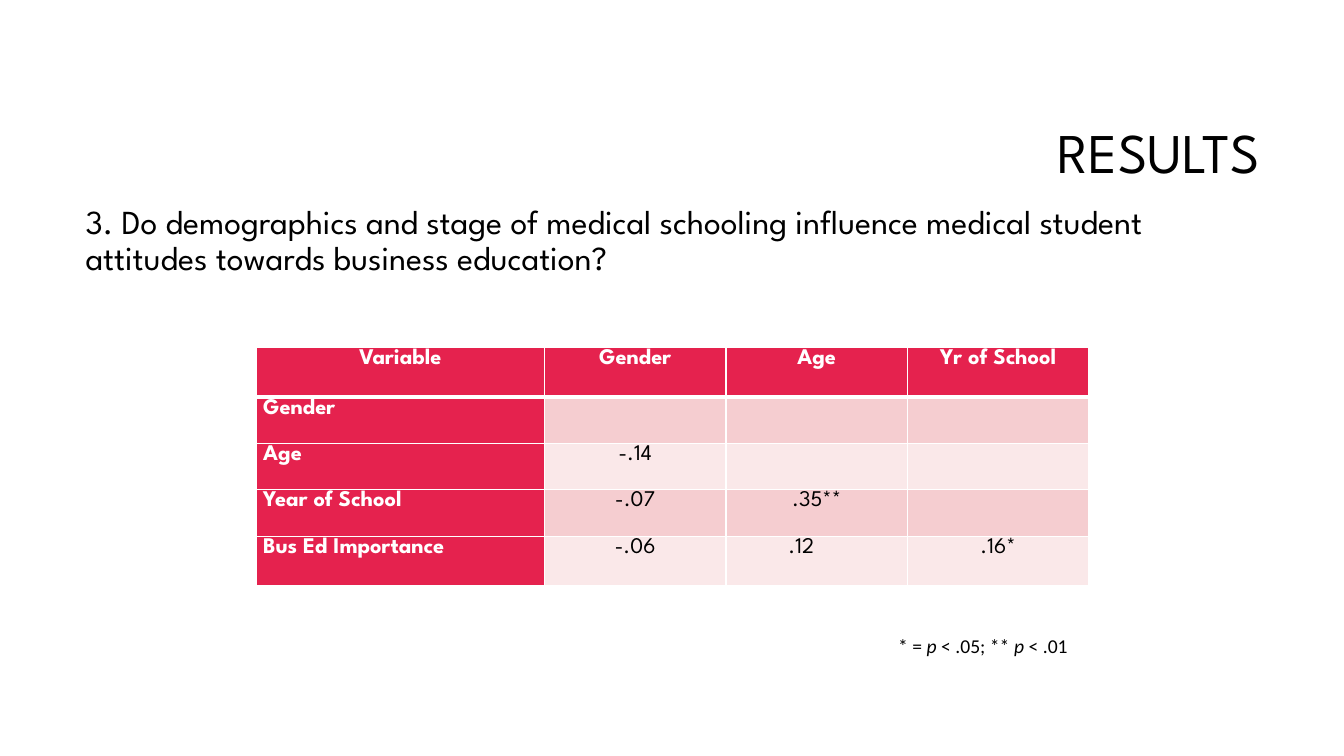
from lxml import etree
from pptx import Presentation, util as u
from pptx.dml.color import RGBColor
from pptx.enum import text as t
from pptx.oxml.ns import qn

PX = 9144
HUES = {"ink": "000000", "white": "FFFFFF", "red": "E5224E", "rose": "F5CDD0", "blush": "FAE8E9"}
SANS = "League Spartan"
MID = t.PP_ALIGN.CENTER
COLS = [286, 180, 180, 180]
ROWS = [49, 46, 46, 46, 49]
CELLS = [
    ["Variable", "Gender", "Age", "Yr of School"],
    ["Gender", "", "", ""],
    ["Age", "-.14", "", ""],
    ["Year of School", "-.07", ".35**", ""],
    ["Bus Ed Importance", "-.06", ".12", ".16*"],
]


def px(n):
    return u.Emu(n * PX)


def hue(name):
    return RGBColor.from_string(HUES[name])


def apply(item, form):
    for key, val in form.items():
        setattr(item, key, val)


def write(para, runs, font, size, ink="ink", **form):
    for words, slant in runs:
        run = para.add_run()
        run.text = words
        apply(run.font, {"name": font, "size": u.Pt(size), "italic": slant, **form})
        run.font.color.rgb = hue(ink)


def text_box(slide, box, runs, font, size, frame, para):
    area = slide.shapes.add_textbox(*map(px, box)).text_frame
    apply(area, {"word_wrap": True, **frame})
    line = area.paragraphs[0]
    apply(line, para)
    write(line, runs, font, size)


def edge(cell, sides):
    props = cell._tc.get_or_add_tcPr()
    for spot, (side, width) in enumerate(sides.items()):
        line = etree.Element(qn("a:ln" + side), w=str(u.Pt(width)))
        fill = etree.SubElement(line, qn("a:solidFill"))
        etree.SubElement(fill, qn("a:srgbClr"), val=HUES["white"])
        props.insert(spot, line)


def grid(slide, box):
    table = slide.shapes.add_table(len(ROWS), len(COLS), *map(px, box)).table
    for col, width in zip(table.columns, COLS):
        col.width = px(width)
    for row, height in zip(table.rows, ROWS):
        row.height = px(height)
    for r, row in enumerate(CELLS):
        for c, words in enumerate(row):
            cell = table.cell(r, c)
            head = r == 0 or c == 0
            inset = words == ".12"
            apply(cell, {
                "margin_left": px(62 if inset else 7), "margin_right": px(7),
                "margin_top": 0, "margin_bottom": 0,
            })
            cell.fill.solid()
            cell.fill.fore_color.rgb = hue("red" if head else "rose" if r % 2 else "blush")
            edge(cell, {"L": 1, "R": 1, "T": 3 if r == 1 else 1, "B": 3 if r == 0 else 1})
            para = cell.text_frame.paragraphs[0]
            left = inset or (c == 0 and r > 0)
            apply(para, {"alignment": t.PP_ALIGN.LEFT if left else MID, "line_spacing": 1.07})
            if words:
                write(para, [(words, False)], SANS, 16, "white" if head else "ink", bold=head)


def results(slide, box):
    x, y, w, h = box
    text_box(slide, (x + 317, y + 84, 942, 141), [("RESULTS", False)], SANS, 40,
             {"vertical_anchor": t.MSO_ANCHOR.MIDDLE},
             {"alignment": t.PP_ALIGN.RIGHT, "line_spacing": 0.9})
    ask = "3. Do demographics and stage of medical schooling influence medical student attitudes towards business education?"
    text_box(slide, (x + 75, y + 199, 1183, 444), [(ask, False)], SANS, 24,
             {"vertical_anchor": t.MSO_ANCHOR.TOP}, {"line_spacing": 0.9})
    grid(slide, (x + 254, y + 345, sum(COLS), sum(ROWS)))
    note = [("* = ", False), ("p", True), (" < .05; ** ", False), ("p", True), (" < .01", False)]
    text_box(slide, (x + 881, y + 624, 199, 34), note, "Calibri", 14,
             {"vertical_anchor": t.MSO_ANCHOR.MIDDLE}, {})


def main():
    deck = Presentation()
    apply(deck, {"slide_width": px(1333), "slide_height": px(750)})
    slide = deck.slides.add_slide(deck.slide_layouts[6])
    results(slide, (0, 0, 1333, 750))
    deck.save("out.pptx")


if __name__ == "__main__":
    main()
